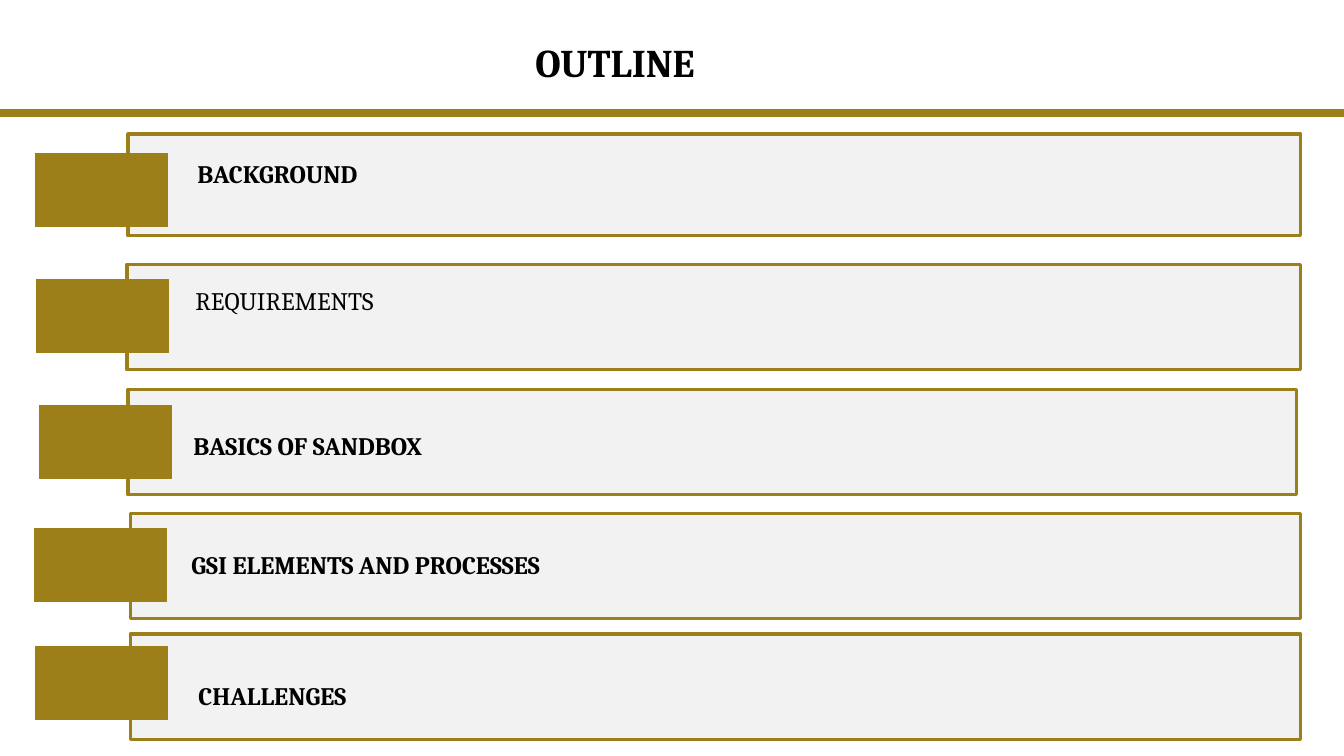
"""Build the outline slide: a title, a gold rule and five labelled bars."""
from lxml import etree
from pptx import Presentation
from pptx.dml.color import RGBColor
from pptx.enum.shapes import MSO_CONNECTOR, MSO_SHAPE
from pptx.enum.text import MSO_ANCHOR, PP_ALIGN
from pptx.oxml.ns import qn
from pptx.util import Inches, Pt

GOLD = RGBColor(0x9C, 0x7F, 0x18)
GREY = RGBColor(0xF2, 0xF2, 0xF2)
BLACK = RGBColor(0, 0, 0)
RECT = MSO_SHAPE.RECTANGLE
LINE = MSO_CONNECTOR.STRAIGHT
TOP = MSO_ANCHOR.TOP
LEFT, CENTER = PP_ALIGN.LEFT, PP_ALIGN.CENTER

deck = Presentation()
deck.slide_width, deck.slide_height = Inches(13.33), Inches(7.5)
slide = deck.slides.add_slide(deck.slide_layouts[5])
shapes = slide.shapes


def write(shape, text, size=18, bold=True, align=LEFT, space=1.0, after=0):
    frame = shape.text_frame
    frame.word_wrap = True
    frame.vertical_anchor = TOP
    frame.text = text
    para = frame.paragraphs[0]
    para.alignment = align
    para.line_spacing = space
    para.space_before, para.space_after = Pt(0), Pt(after)
    font = para.runs[0].font
    font.name, font.size, font.bold = "Cambria", Pt(size), bold
    font.color.rgb = BLACK


def block(left, top, width, height, fill, weight):
    rect = shapes.add_shape(RECT, Inches(left), Inches(top), Inches(width), Inches(height))
    rect.shadow.inherit = False
    rect.fill.solid()
    rect.fill.fore_color.rgb = fill
    rect.line.color.rgb = GOLD
    rect.line.width = Pt(weight)


rule = shapes.add_connector(LINE, 0, Inches(1.12), Inches(13.33), Inches(1.12))
rule.line.color.rgb = GOLD
rule.line.width = Pt(6)
etree.SubElement(rule._element.spPr, qn("a:effectLst"))

title = shapes.title
title.left, title.top = Inches(4.25), Inches(0.33)
title.width, title.height = Inches(3.7), Inches(0.57)
write(title, "OUTLINE", size=28, align=CENTER)

plain = {"bold": False, "space": 0.9, "after": 6}
# Each row: bar left, top, width, height; tab left, top; label left, top, height
rows = [
    ("BACKGROUND", (1.27, 1.33, 11.63, 1.01), (0.35, 1.52), (1.86, 1.52, 0.71), {}),
    ("REQUIREMENTS", (1.26, 2.62, 11.64, 1.05), (0.36, 2.77), (1.84, 2.82, 0.37), plain),
    ("BASICS OF SANDBOX", (1.27, 3.86, 11.59, 1.05), (0.39, 4.02), (1.82, 4.22, 0.4), {}),
    ("GSI ELEMENTS AND PROCESSES", (1.29, 5.09, 11.61, 1.05), (0.34, 5.24), (1.8, 5.4, 0.4), {}),
    ("CHALLENGES", (1.29, 6.29, 11.61, 1.05), (0.35, 6.41), (1.87, 6.7, 0.4), {}),
]
for text, bar, tab, (left, top, height), style in rows:
    block(*bar, GREY, 2.25)
    block(*tab, 1.31, 0.73, GOLD, 0.75)
    label = shapes.add_textbox(Inches(left), Inches(top), Inches(10.65), Inches(height))
    write(label, text, **style)

deck.save("out.pptx")
